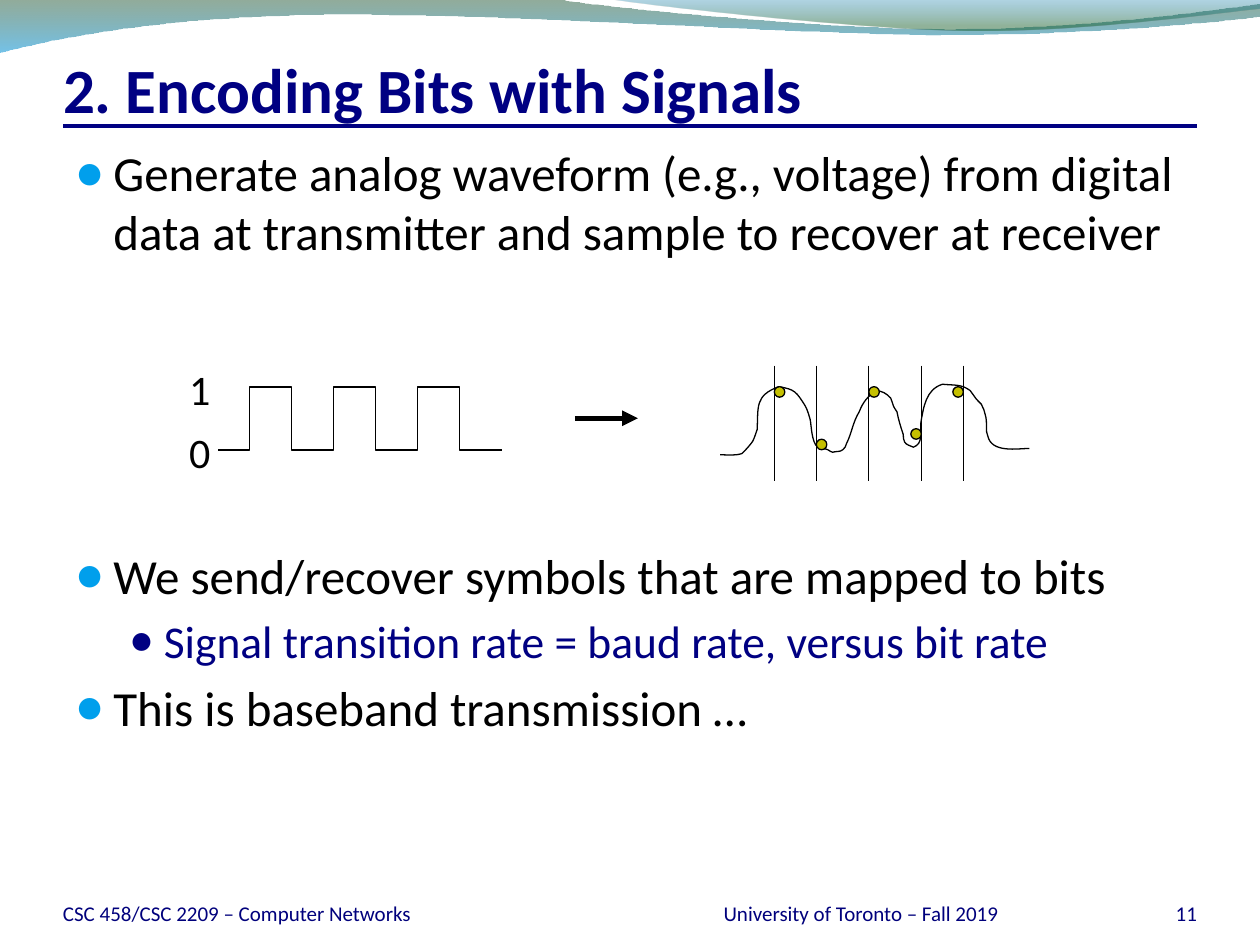
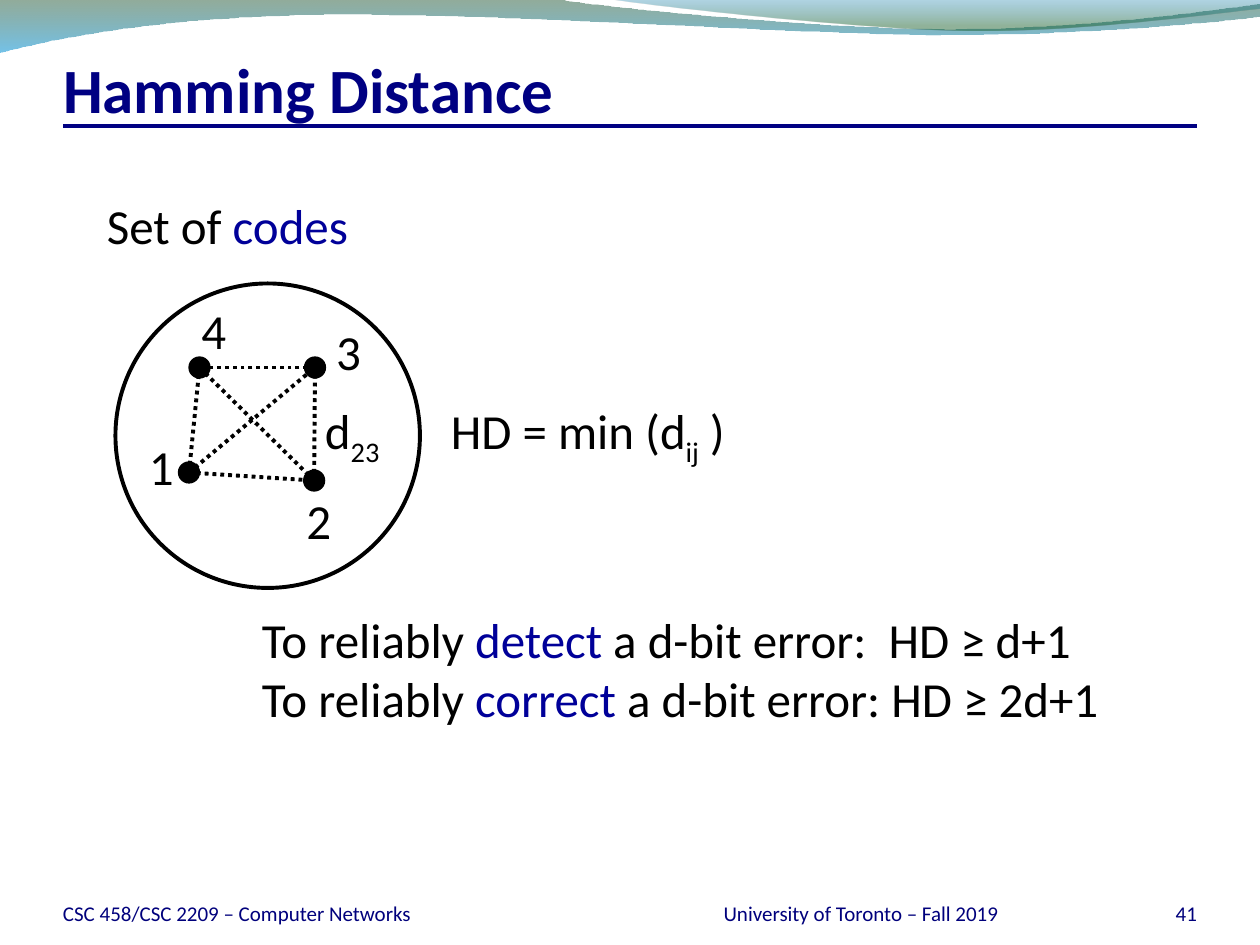
"""Builds two lecture slides: encoding bits with signals, and Hamming distance."""
import itertools

import lxml.etree
import pptx
import pptx.dml.color
import pptx.enum.dml
import pptx.enum.shapes
import pptx.enum.text
import pptx.oxml.ns
import pptx.util

Pt = pptx.util.Pt
ALIGN = pptx.enum.text.PP_ALIGN
ANCHOR = pptx.enum.text.MSO_ANCHOR
FONT = "Calibri"
BLACK, WHITE, NAVY, SKY = "000000", "FFFFFF", "000082", "009FEC"
FOOTER_BLUE, KEYWORD, SAMPLE = "00007C", "000099", "C5C000"

TITLE_BOX = (36, 24, 648, 48)
BODY_BOX = (36, 78, 648, 420)
RULE = ((36, 72), (684, 72))
BANDS = [
    {"stops": [(0, "0F461E", 45), (1, "0090D6", 55)],
     "outline": [(0, -0.7), (316.8, -0.7),
                 (342.7, 4.3, 478.1, 16.6, 545.8, 16.6), (614.2, 16.6, 689.8, 6.5, 720, 2.2),
                 (720.7, 9.4), (707.8, 11.5, 626.4, 20.2, 537.1, 20.2),
                 (447.8, 19.4, 275, 7.2, 185, 8.6), (92.9, 9.4, 33.1, 21.6, -0.7, 30.2),
                 (0, -0.7)]},
    {"stops": [(0, "0076AF", 30), (0.8, "0D5821", 45)],
     "outline": [(344.9, -0.7), (366.5, 2.9, 491, 16.6, 553.7, 17.3),
                 (616.3, 18, 691.9, 7.9, 720, 5), (720, -0.7), (344.9, -0.7)]},
]
FOOTERS = [
    ("CSC 458/CSC 2209 – Computer Networks", (36, 500.4, 330, 28.8), ALIGN.LEFT),
    ("University of Toronto – Fall 2019", (378, 500.4, 228, 28.8), ALIGN.CENTER),
]
NUMBER_BOX = (624, 500.4, 60, 28.8)

LEVELS = [
    {"size": 28, "color": BLACK, "bullet": SKY, "scale": 95, "left": 21.6, "hang": 21.6},
    {"size": 26, "color": NAVY, "bullet": NAVY, "scale": 85, "left": 50.4, "hang": 19.4},
]
BULLETS = [
    (0, 5.6, "Generate analog waveform (e.g., voltage) from digital data "
             "at transmitter and sample to recover at receiver"),
    (0, 162.6, "We send/recover symbols that are mapped to bits"),
    (1, 5.2, "Signal transition rate = baud rate, versus bit rate"),
    (0, 5.6, "This is baseband transmission …"),
]
BIT_LABELS = [("0", 240), ("1", 204)]
PULSES = {"start": 124.6, "first": 142.6, "count": 3, "width": 24, "low": 257.2, "high": 221.2}
ARROW = ((328.5, 239), (364.5, 239))
ANALOG_WAVE = [
    (411.6, 259.9), (415.4, 259.9, 419.8, 260.6, 424.1, 259.2),
    (424.8, 258.5, 429.8, 253.4, 430.6, 251.3), (431.3, 249.8, 432.7, 245.5, 432.7, 245.5),
    (433.4, 232.6, 431.3, 226.1, 445, 221), (454.3, 222.5, 455, 223.9, 460.1, 231.8),
    (461.5, 234, 463, 239.8, 463, 239.8), (463.7, 242.6, 463.7, 252.7, 467.3, 255.6),
    (469.4, 256.3, 471.6, 256.3, 473, 257), (473.8, 257.8, 475.9, 258.5, 475.9, 258.5),
    (477.4, 257.8, 480.2, 258.5, 481.7, 257), (483.1, 256.3, 483.1, 254.9, 483.8, 253.4),
    (486.7, 247.7, 487.4, 241.2, 491, 235.4), (493.2, 229.7, 496.1, 226.1, 501.1, 223.2),
    (504.7, 223.9, 506.2, 224.6, 509, 227.5), (511.2, 233.3, 509.8, 231.1, 512.6, 235.4),
    (513.4, 239.8, 514.8, 244.1, 516.2, 248.4), (516.2, 249.8, 516.2, 251.3, 517, 252.7),
    (517.7, 254.2, 520.6, 254.9, 522, 255.6), (527.8, 253.4, 525.6, 247.7, 526.3, 241.2),
    (527.8, 232.6, 529.2, 222.5, 538.6, 219.6), (546.5, 220.3, 549.4, 219.6, 554.4, 223.2),
    (558.7, 229, 556.6, 226.8, 560.9, 231.1), (561.6, 233.3, 563, 234.7, 563, 236.9),
    (564.5, 241.2, 563, 247, 564.5, 249.1), (566.6, 259.2, 581.8, 256.3, 588.2, 256.3),
]
SAMPLE_TIMES = [442.5, 466.5, 496.5, 526.5, 550.5]
SAMPLE_SPAN = (209, 275)
SAMPLE_DOTS = [(445.5, 224), (469.5, 254), (499.5, 224), (523.5, 248), (547.5, 224)]

CODE_CIRCLE = (66, 162, 174, 174)
CODES = {"1": (108, 270), "2": (179.5, 274.6), "3": (180, 210), "4": (114, 210)}
CODE_LABELS = {"1": (78, 246), "2": (168, 276.5), "3": (185, 180), "4": (108, 168)}
STATEMENTS = [
    ((142.6, 345, 498.2, 75), [
        [("To reliably ", {}), ("detect", {"color": KEYWORD}), (" a d-bit error:  HD ≥ d+1", {})],
        [("To reliably ", {}), ("correct", {"color": KEYWORD}),
         (" a d-bit error: HD ≥ 2d+1", {})]]),
    ((250.6, 225.6, 174.2, 41), [[("HD = min (d", {}), ("ij", {"sub": True}), (" )", {})]]),
    ((178.6, 225.6, 49, 41), [[("d", {}), ("23", {"sub": True})]]),
    ((54, 108, 154, 41), [[("Set of ", {}), ("codes", {"color": KEYWORD})]]),
]


def tint(code):
    return pptx.dml.color.RGBColor.from_string(code)


def assign(target, formats):
    for name, value in formats.items():
        setattr(target, name, value)


def add_xml(parent, tag, **attributes):
    return lxml.etree.SubElement(parent, pptx.oxml.ns.qn(tag), attributes)


def place(box, bounds):
    assign(box, dict(zip(("left", "top", "width", "height"), map(Pt, bounds))))


def set_frame(frame, insets, anchor, wrap):
    sides = ("margin_left", "margin_top", "margin_right", "margin_bottom")
    assign(frame, dict(zip(sides, map(Pt, insets))))
    assign(frame, {"auto_size": pptx.enum.text.MSO_AUTO_SIZE.NONE,
                   "vertical_anchor": anchor, "word_wrap": wrap})


def add_span(para, text, size, color=BLACK, bold=False, sub=False):
    span = para.add_run()
    span.text = text
    assign(span.font, {"name": FONT, "size": Pt(size), "bold": bold})
    span.font.color.rgb = tint(color)
    if sub:
        span.font._element.set("baseline", "-25000")


def add_label(page, bounds, lines, size, align=ALIGN.LEFT, anchor=ANCHOR.TOP,
              insets=(7.2, 3.6, 7.2, 3.6), wrap=False):
    frame = page.shapes.add_textbox(*map(Pt, bounds)).text_frame
    set_frame(frame, insets, anchor, wrap)
    for index, spans in enumerate(lines):
        para = frame.add_paragraph() if index else frame.paragraphs[0]
        para.alignment = align
        for text, formats in spans:
            add_span(para, text, size, **formats)


def add_line(page, start, end, color=BLACK, width=0.75, dash=None, arrow=False):
    line = page.shapes.add_connector(
        pptx.enum.shapes.MSO_CONNECTOR.STRAIGHT, *map(Pt, start + end))
    assign(line.line, {"width": Pt(width), "dash_style": dash})
    line.line.color.rgb = tint(color)
    if arrow:
        add_xml(line.line._get_or_add_ln(), "a:tailEnd", type="triangle")
    add_xml(line._element.spPr, "a:effectLst")
    return line


def add_ellipse(page, bounds, fill, width=0.75):
    ellipse = page.shapes.add_shape(pptx.enum.shapes.MSO_SHAPE.OVAL, *map(Pt, bounds))
    ellipse.shadow.inherit = False
    ellipse.fill.solid()
    ellipse.fill.fore_color.rgb = tint(fill)
    ellipse.line.color.rgb = tint(BLACK)
    ellipse.line.width = Pt(width)


def add_dot(page, center, size, fill):
    add_ellipse(page, (center[0] - size / 2, center[1] - size / 2, size, size), fill)


def add_outline(page, outline, close=False):
    points = [tuple(map(Pt, part[at:at + 2])) for part in outline for at in range(0, len(part), 2)]
    builder = page.shapes.build_freeform(*points[0])
    builder.add_line_segments(points[1:], close=close)
    shape = builder.convert_to_shape()
    shape.shadow.inherit = False
    segments = iter(list(shape._element.iter(pptx.oxml.ns.qn("a:lnTo"))))
    for part in outline[1:]:
        curve, *controls = itertools.islice(segments, len(part) // 2)
        if controls:
            bezier = add_xml(curve.getparent(), "a:cubicBezTo")
            curve.addprevious(bezier)
            for segment in (curve, *controls):
                bezier.append(segment[0])
                segment.getparent().remove(segment)
    return shape


def add_wave(page, outline):
    wave = add_outline(page, outline)
    wave.fill.background()
    wave.line.color.rgb = tint(BLACK)
    wave.line.width = Pt(0.75)


def add_band(page, band):
    shape = add_outline(page, band["outline"], close=True)
    shape.line.fill.background()
    shape.fill.gradient()
    shape.fill.gradient_angle = 270
    for stop, (position, color, _) in zip(shape.fill.gradient_stops, band["stops"]):
        stop.color.rgb = tint(color)
        stop.position = position
    colors = shape._element.spPr.iter(pptx.oxml.ns.qn("a:srgbClr"))
    for element, (_, _, opacity) in zip(colors, band["stops"]):
        add_xml(element, "a:alpha", val=str(opacity * 1000))
    return shape


def share_background(deck, page):
    parts = [add_band(page, band) for band in BANDS]
    parts.append(add_line(page, *RULE, color=NAVY, width=2.25))
    for index, part in enumerate(parts):
        next(part._element.iter(pptx.oxml.ns.qn("p:cNvPr"))).set("id", str(101 + index))
        deck.slide_master.shapes._spTree.insert(2 + index, part._element)


def add_page(deck, layout, title, number):
    page = deck.slides.add_slide(deck.slide_layouts[layout])
    heading = page.shapes.title
    place(heading, TITLE_BOX)
    set_frame(heading.text_frame, (0, 3.6, 0, 0), ANCHOR.BOTTOM, True)
    para = heading.text_frame.paragraphs[0]
    para.alignment = ALIGN.LEFT
    add_span(para, title, 36, NAVY, bold=True)
    for text, bounds, align in FOOTERS + [(number, NUMBER_BOX, ALIGN.RIGHT)]:
        add_label(page, bounds, [[(text, {"color": FOOTER_BLUE})]], 12, align,
                  ANCHOR.BOTTOM, (0, 0, 0, 0), True)
    return page


def fill_body(body):
    place(body, BODY_BOX)
    set_frame(body.text_frame, (7.2, 3.6, 7.2, 3.6), ANCHOR.TOP, True)
    for index, (level, gap, text) in enumerate(BULLETS):
        style = LEVELS[level]
        para = body.text_frame.add_paragraph() if index else body.text_frame.paragraphs[0]
        assign(para, {"level": level, "space_before": Pt(gap)})
        add_span(para, text, style["size"], style["color"])
        properties = para._p.get_or_add_pPr()
        properties.set("marL", str(Pt(style["left"])))
        properties.set("indent", str(-Pt(style["hang"])))
        add_xml(add_xml(properties, "a:buClr"), "a:srgbClr", val=style["bullet"])
        add_xml(properties, "a:buSzPct", val=str(style["scale"] * 1000))
        add_xml(properties, "a:buFont", typeface=FONT)
        add_xml(properties, "a:buChar", char="●")


def square_wave(start, first, count, width, low, high):
    points = [(start, low)]
    for pulse in range(count):
        left = first + 2 * width * pulse
        right = left + width
        points += [(left, low), (left, high), (right, high), (right, low)]
    return points + [(right + width, low)]


def build_encoding(deck):
    page = add_page(deck, 1, "2. Encoding Bits with Signals", "11")
    share_background(deck, page)
    fill_body(page.placeholders[1])
    add_wave(page, square_wave(**PULSES))
    add_wave(page, ANALOG_WAVE)
    for time in SAMPLE_TIMES:
        add_line(page, (time, SAMPLE_SPAN[0]), (time, SAMPLE_SPAN[1]))
    add_line(page, *ARROW, width=3, arrow=True)
    for bit, top in BIT_LABELS:
        add_label(page, (100.8, top, 26.6, 36), [[(bit, {})]], 24, ALIGN.CENTER)
    for center in SAMPLE_DOTS:
        add_dot(page, center, 6, SAMPLE)


def build_hamming(deck):
    page = add_page(deck, 5, "Hamming Distance", "41")
    add_ellipse(page, CODE_CIRCLE, WHITE, 2.25)
    for start, end in itertools.combinations(CODES.values(), 2):
        add_line(page, start, end, width=2.25, dash=pptx.enum.dml.MSO_LINE.ROUND_DOT)
    for code, center in CODES.items():
        add_dot(page, center, 12, BLACK)
        add_label(page, CODE_LABELS[code] + (28.8, 41), [[(code, {})]], 28)
    for bounds, lines in STATEMENTS:
        add_label(page, bounds, lines, 28)


def main():
    deck = pptx.Presentation()
    assign(deck, {"slide_width": Pt(720), "slide_height": Pt(540)})
    build_encoding(deck)
    build_hamming(deck)
    deck.save("out.pptx")


if __name__ == "__main__":
    main()
